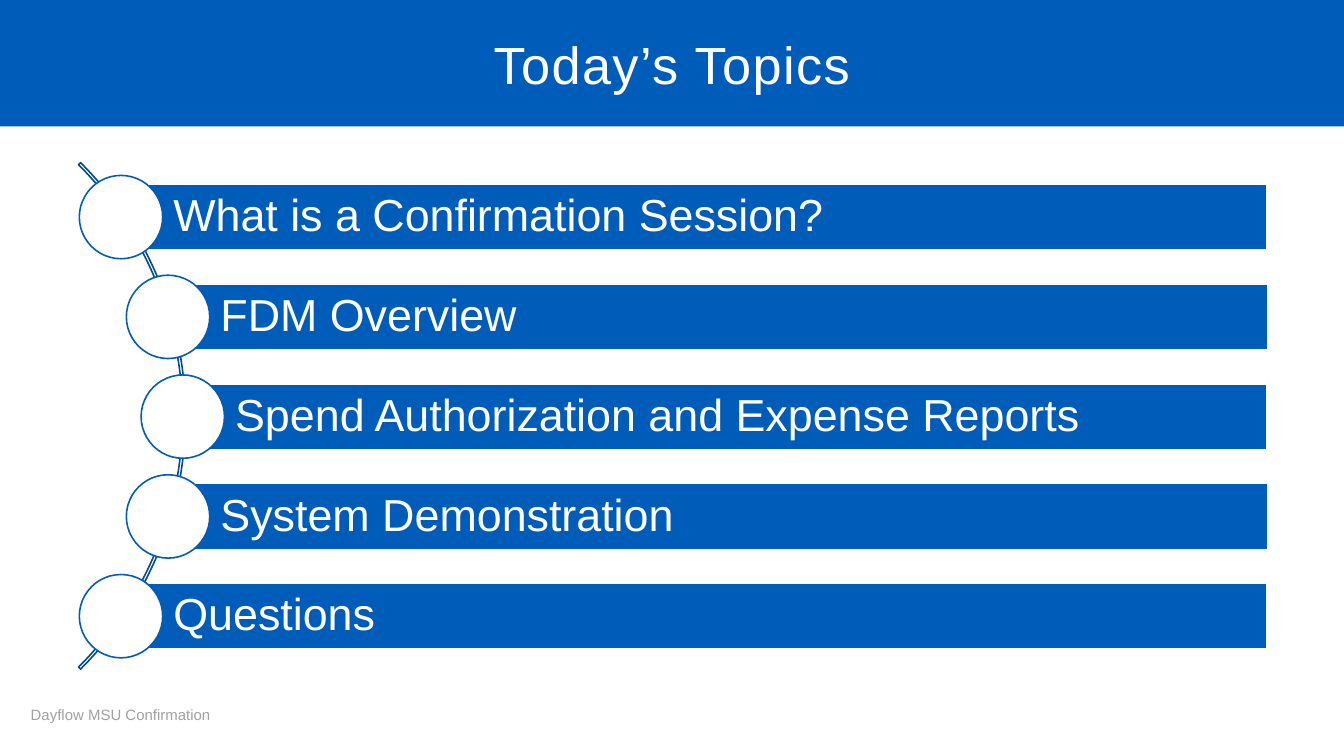
from pptx import Presentation
from pptx.dml.color import RGBColor
from pptx.enum.shapes import MSO_SHAPE
from pptx.enum.text import MSO_ANCHOR, PP_ALIGN
from pptx.util import Inches, Pt

COLORS = {"blue": "005CB9", "navy": "004A94", "white": "FFFFFF", "gray": "A0A0A0"}
FONT = "Arial"

# Each topic with the centre of its circle, which is also the left edge of its bar
TOPICS = [
    ("What is a Confirmation Session?", 0.9),
    ("FDM Overview", 1.25),
    ("Spend Authorization and Expense Reports", 1.36),
    ("System Demonstration", 1.25),
    ("Questions", 0.9),
]
BAR_TOP, BAR_HEIGHT, BAR_RIGHT = 1.37, 0.49, 9.43
LAST_BAR_TOP = 4.34
CIRCLE = 0.62


def color(name):
    return RGBColor.from_string(COLORS[name])


def add_text(shape, text, size, color_name, align=PP_ALIGN.LEFT):
    frame = shape.text_frame
    frame.word_wrap = True
    frame.vertical_anchor = MSO_ANCHOR.MIDDLE
    para = frame.paragraphs[0]
    para.alignment = align
    span = para.add_run()
    span.text = text
    span.font.name = FONT
    span.font.size = Pt(size)
    span.font.color.rgb = color(color_name)
    return para, span


def add_box(page, left, top, width, height):
    return page.shapes.add_textbox(
        Inches(left), Inches(top), Inches(width), Inches(height))


def add_outlined(page, kind, left, top, width, height, fill, line):
    shape = page.shapes.add_shape(
        kind, Inches(left), Inches(top), Inches(width), Inches(height))
    shape.shadow.inherit = False
    if fill:
        shape.fill.solid()
        shape.fill.fore_color.rgb = color(fill)
    else:
        shape.fill.background()
    shape.line.color.rgb = color(line)
    shape.line.width = Pt(0.85)
    return shape


def add_title(page, text):
    title = page.shapes.title
    title.left, title.top = Inches(0), Inches(0)
    title.width, title.height = Inches(10), Inches(0.94)
    title.fill.solid()
    title.fill.fore_color.rgb = color("blue")
    _, span = add_text(title, text, 28, "white", PP_ALIGN.CENTER)
    span.font._element.set("spc", "80")


def add_footer(page, text):
    add_text(add_box(page, 0.13, 5.17, 3.38, 0.3), text, 8, "gray")


def add_arc(page):
    arc = add_outlined(page, MSO_SHAPE.BLOCK_ARC, -3.95, 0.43, 5.33, 5.33, None, "navy")
    # Start angle, end angle and band thickness
    for index, value in enumerate((189, 27, 0.004)):
        arc.adjustments[index] = value


def add_topic(page, text, center, top):
    place = (center, top, BAR_RIGHT - center, BAR_HEIGHT)
    add_outlined(page, MSO_SHAPE.RECTANGLE, *place, "blue", "white")
    label = add_box(page, *place)
    frame = label.text_frame
    frame.margin_left = Inches(0.39)
    frame.margin_top = frame.margin_right = frame.margin_bottom = Inches(0.07)
    para, _ = add_text(label, text, 24, "white")
    para.line_spacing = 0.9
    add_outlined(page, MSO_SHAPE.OVAL, center - CIRCLE / 2,
                 top + (BAR_HEIGHT - CIRCLE) / 2, CIRCLE, CIRCLE, "white", "blue")


def main():
    # Widescreen page, 16:9
    deck = Presentation()
    deck.slide_width = Inches(10)
    deck.slide_height = Inches(10 * 9 / 16)
    page = deck.slides.add_slide(deck.slide_layouts[5])

    # Title band and footer
    add_title(page, "Today’s Topics")
    add_footer(page, "Dayflow MSU Confirmation")

    # Topics along the arc
    add_arc(page)
    step = (LAST_BAR_TOP - BAR_TOP) / (len(TOPICS) - 1)
    for row, (text, center) in enumerate(TOPICS):
        add_topic(page, text, center, BAR_TOP + row * step)

    deck.save("out.pptx")


if __name__ == "__main__":
    main()
